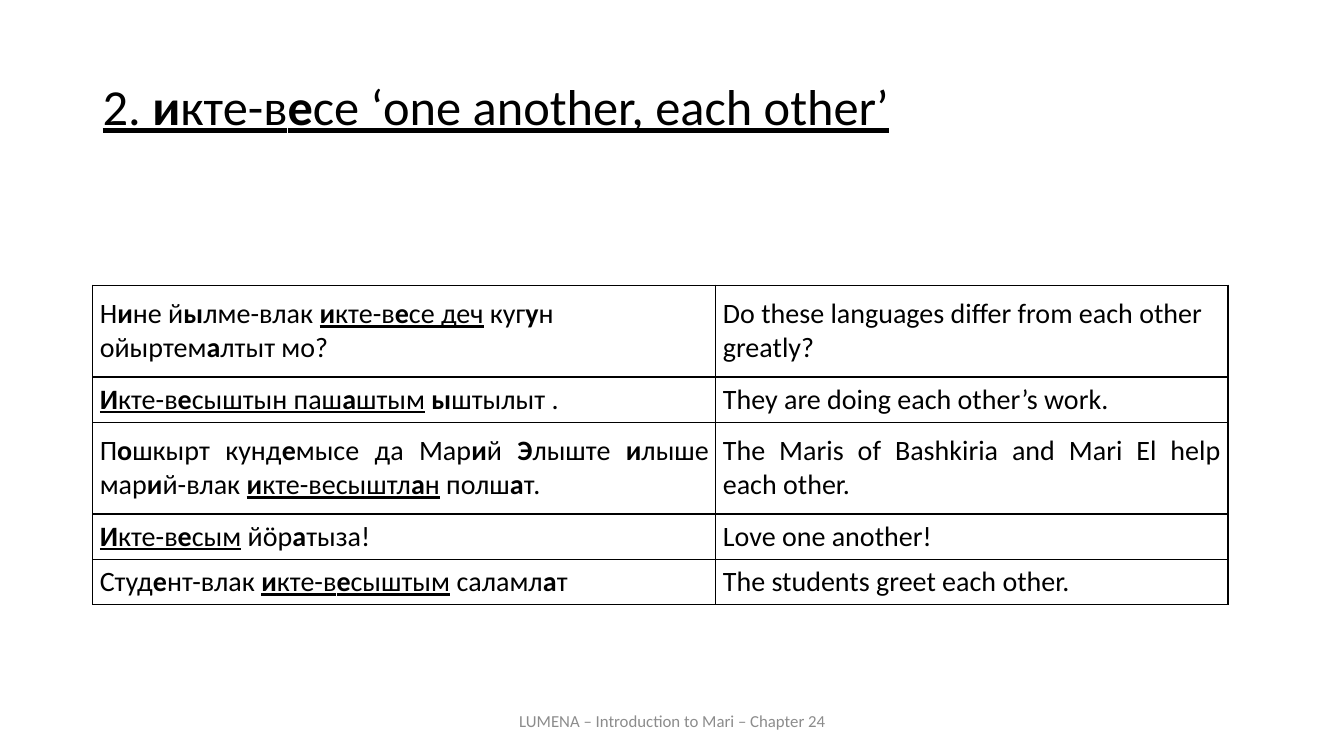
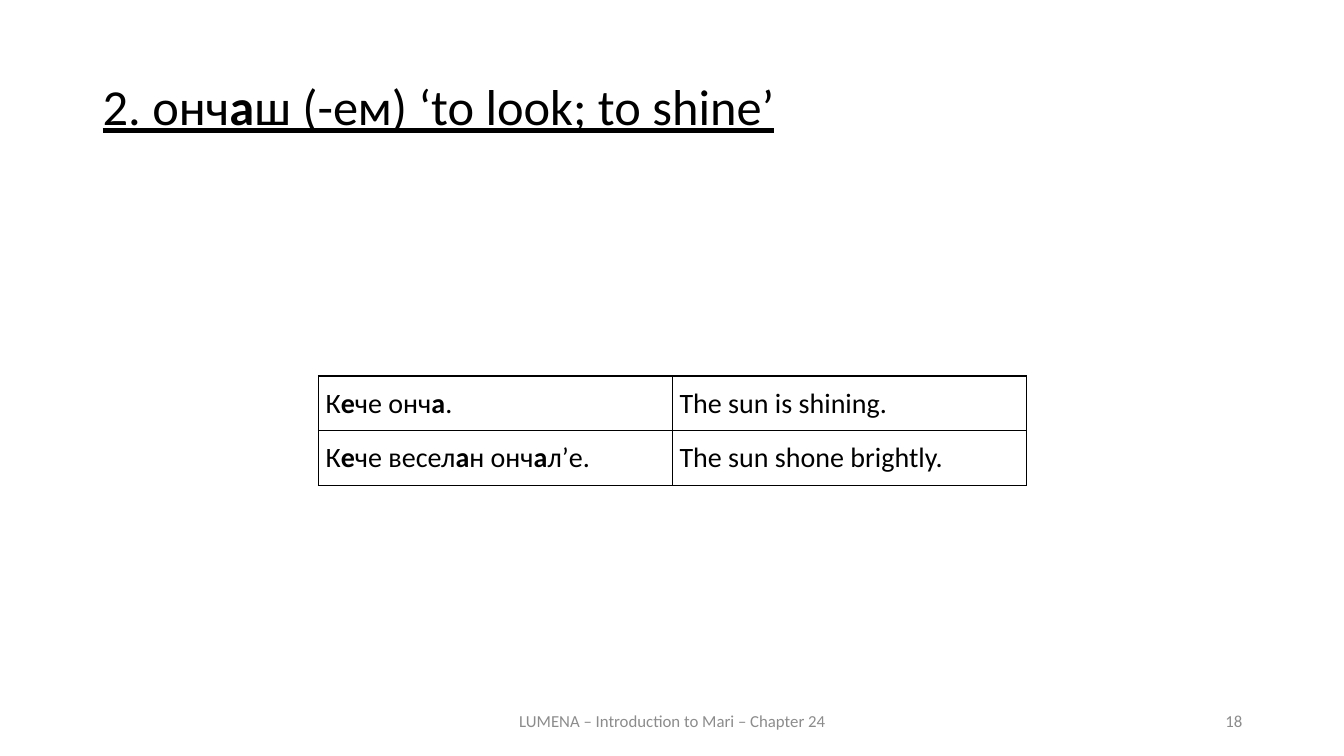
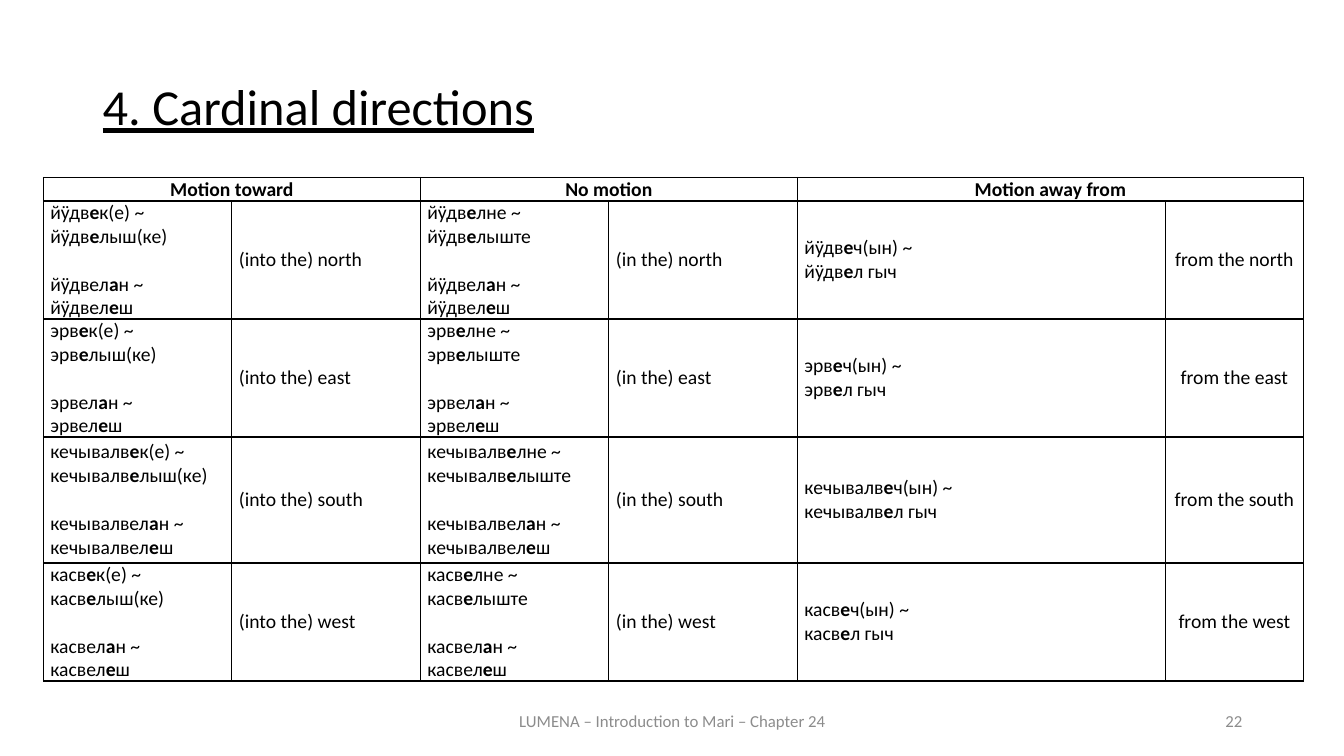
from dataclasses import dataclass
from lxml.etree import SubElement
from pptx import Presentation
from pptx.dml.color import RGBColor
from pptx.enum.text import MSO_ANCHOR, PP_ALIGN
from pptx.oxml import parse_xml
from pptx.oxml.ns import nsdecls
from pptx.util import Inches, Pt


@dataclass(frozen=True)
class Theme:
    """Colours, fonts and type sizes of the deck."""
    font: str = "Calibri"
    ink: str = "000000"
    grey: str = "8C8C8C"
    title: int = 36
    body: int = 20
    small: int = 14
    foot: int = 12
    rule: int = 1
    pad: float = 0.07
    gap: int = 17


THEME = Theme()
LEFT, MID, RIGHT, FULL = PP_ALIGN.LEFT, PP_ALIGN.CENTER, PP_ALIGN.RIGHT, PP_ALIGN.JUSTIFY
FOOTER = "LUMENA – Introduction to Mari – Chapter 24"


def add_runs(para, text, size, color):
    """Add runs to a paragraph: *bold* and _underlined_ marks switch styles."""
    for i, part in enumerate(text.split("_")):
        for j, bit in enumerate(part.split("*")):
            if bit:
                run = para.add_run()
                run.text = bit
                font = run.font
                font.name, font.size = THEME.font, Pt(size)
                font.color.rgb = RGBColor.from_string(color)
                font.bold, font.underline = j % 2 == 1, i % 2 == 1


def fill_frame(frame, text, size, color, align):
    """Write one paragraph per line; an empty line widens the gap before the next."""
    frame.word_wrap = True
    para, gap = frame.paragraphs[0], 0
    for line in text.split("\n"):
        if not line:
            gap = THEME.gap
            continue
        if para.runs:
            para = frame.add_paragraph()
        para.alignment = align
        if gap:
            para.space_before, gap = Pt(gap), 0
        add_runs(para, line, size, color)
    return frame


def add_text(slide, box, text, size, color, align, anchor=MSO_ANCHOR.MIDDLE):
    """Place a text box."""
    frame = slide.shapes.add_textbox(*map(Inches, box)).text_frame
    fill_frame(frame, text, size, color, align).vertical_anchor = anchor
    return frame


def add_frame(deck, title, page=None):
    """Start a slide with its title, footer and optional page number."""
    slide = deck.slides.add_slide(deck.slide_layouts[6])
    head = add_text(slide, (0.92, 0.76, 11.5, 0.83), f"_{title}_",
                    THEME.title, THEME.ink, FULL, MSO_ANCHOR.TOP)
    head.paragraphs[0].line_spacing = 0.9
    add_text(slide, (4.42, 6.95, 4.5, 0.4), FOOTER, THEME.foot, THEME.grey, MID)
    if page:
        add_text(slide, (9.42, 6.95, 3, 0.4), str(page), THEME.foot, THEME.grey, RIGHT)
    return slide


def style_cell(cell):
    """Give a cell its margins, clear fill and thin borders."""
    cell.margin_left = cell.margin_right = Inches(THEME.pad)
    cell.margin_top = cell.margin_bottom = 0
    cell.vertical_anchor = MSO_ANCHOR.MIDDLE
    cell.fill.background()
    props = cell._tc.get_or_add_tcPr()
    for spot, side in enumerate("LRTB"):
        line = parse_xml(f'<a:ln{side} {nsdecls("a")} w="{Pt(THEME.rule)}"/>')
        fill = SubElement(line, line.tag.replace(f"ln{side}", "solidFill"))
        SubElement(fill, fill.tag.replace("solidFill", "srgbClr"), val=THEME.ink)
        props.insert(spot, line)


def add_grid(slide, spot, cols, heights, rows, size, align):
    """Place a ruled table; None continues the cell on its left."""
    left, top = spot
    table = slide.shapes.add_table(
        len(rows), len(cols), Inches(left), Inches(top),
        Inches(sum(cols)), Inches(sum(heights))).table
    table.first_row = table.horz_banding = False
    for col, width in zip(table.columns, cols):
        col.width = Inches(width)
    for row, height in zip(table.rows, heights):
        row.height = Inches(height)
    for r, row in enumerate(rows):
        for c, text in enumerate(row):
            cell = table.cell(r, c)
            style_cell(cell)
            if text is None:
                table.cell(r, c - 1).merge(cell)
            else:
                fill_frame(cell.text_frame, text, size, THEME.ink, align(r, c))


def add_pairs(deck):
    """Build the slide on the reciprocal pronoun."""
    slide = add_frame(deck, "2. *и*кте-в*е*се ‘one another, each other’")
    rows = [
        ("Н*и*не й*ы*лме-влак _*и*кте-в*е*се деч_ куг*у*н ойыртем*а*лтыт мо?",
         "Do these languages differ from each other greatly?"),
        ("_*И*кте-в*е*сыштын паш*а*штым_ *ы*штылыт .",
         "They are doing each other’s work."),
        ("П*о*шкырт кунд*е*мысе да Мар*и*й *Э*лыште *и*лыше мар*и*й-влак "
         "_*и*кте-весыштл*а*н_ полш*а*т.",
         "The Maris of Bashkiria and Mari El help each other."),
        ("_*И*кте-в*е*сым_ йӧр*а*тыза!", "Love one another!"),
        ("Студ*е*нт-влак _*и*кте-в*е*сыштым_ саламл*а*т",
         "The students greet each other."),
    ]
    add_grid(slide, (0.92, 2.83), (6.18, 5.08), (0.91, 0.45, 0.91, 0.45, 0.45),
             rows, THEME.body, lambda r, c: FULL if r else LEFT)


def add_shine(deck):
    """Build the slide on the verb of looking and shining."""
    slide = add_frame(deck, "2. онч*а*ш (-ем) ‘to look; to shine’", 18)
    rows = [
        ("К*е*че онч*а*.", "The sun is shining."),
        ("К*е*че весел*а*н онч*а*л’е.", "The sun shone brightly."),
    ]
    add_grid(slide, (3.16, 3.73), (3.51,) * 2, (0.545,) * 2,
             rows, THEME.body, lambda r, c: FULL)


def form_row(stem, name):
    """Inflect one direction for all three kinds of motion."""
    tail = f"\n\n{stem}ел*а*н ~\n{stem}ел*е*ш"
    return (f"{stem}*е*к(е) ~\n{stem}*е*лыш(ке){tail}", f"(into the) {name}",
            f"{stem}*е*лне ~\n{stem}*е*лыште{tail}", f"(in the) {name}",
            f"{stem}*е*ч(ын) ~\n{stem}*е*л гыч", f"from the {name}")


def add_compass(deck):
    """Build the slide on cardinal directions."""
    slide = add_frame(deck, "4. Cardinal directions", 22)
    stems = {"north": "йӱдв", "east": "эрв", "south": "кечывалв", "west": "касв"}
    rows = [("*Motion toward*", None, "*No motion*", None, "*Motion away from*", None)]
    rows += [form_row(stem, name) for name, stem in stems.items()]
    add_grid(slide, (0.43, 1.76), (1.87,) * 4 + (3.65, 1.37),
             (0.13, 1.13, 1.13, 1.25, 1.13), rows, THEME.small,
             lambda r, c: MID if r == 0 or c == 5 else LEFT)


def main():
    """Build and save the deck."""
    deck = Presentation()
    deck.slide_width, deck.slide_height = Inches(13.33), Inches(7.5)
    for build in (add_pairs, add_shine, add_compass):
        build(deck)
    deck.save("out.pptx")


if __name__ == "__main__":
    main()
